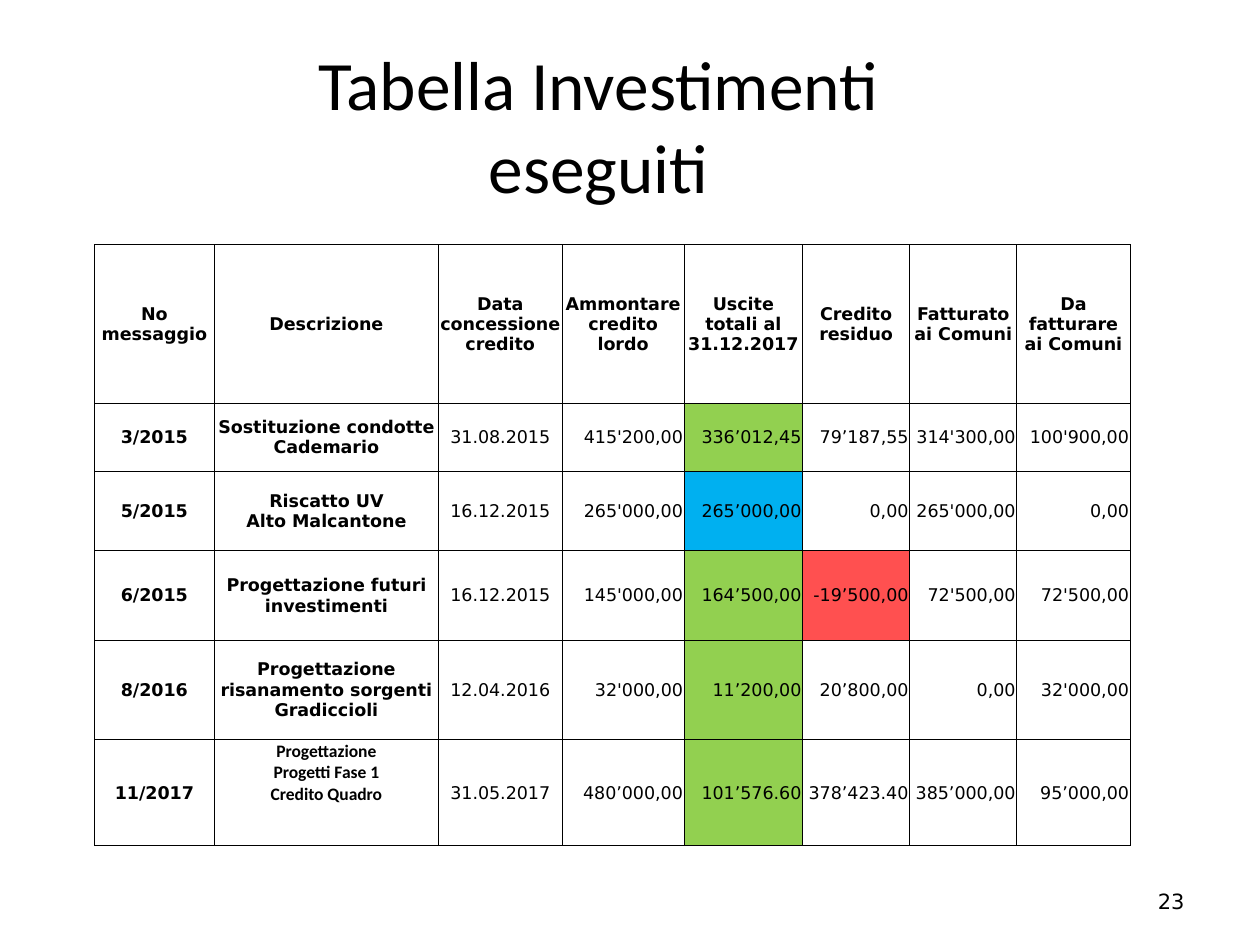
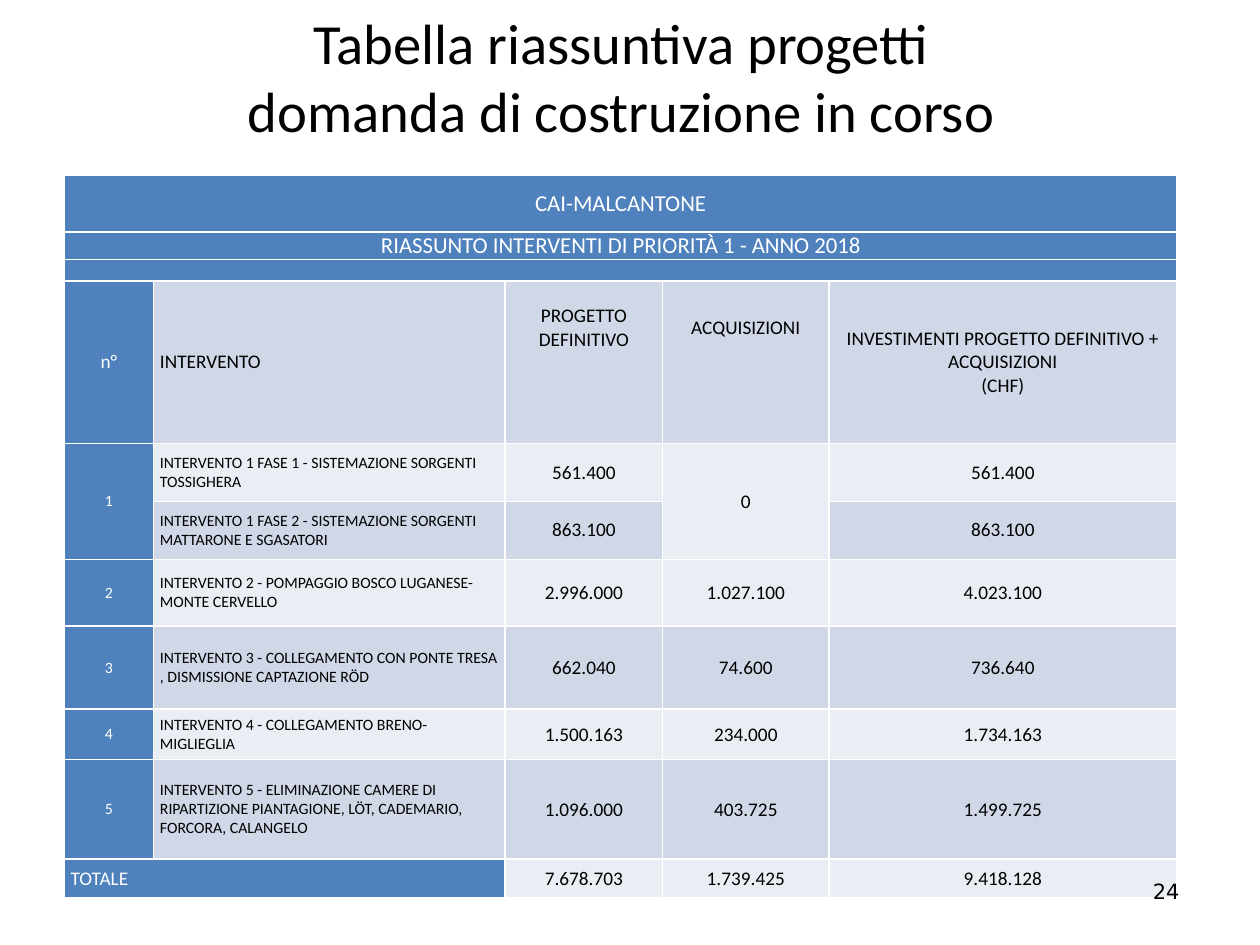
from lxml.etree import SubElement
from pptx import Presentation
from pptx.dml.color import RGBColor
from pptx.enum.text import MSO_ANCHOR, PP_ALIGN
from pptx.oxml import parse_xml
from pptx.oxml.ns import nsdecls, qn
from pptx.util import Inches, Pt

COLORS = {
    "black": "000000", "white": "FFFFFF", "green": "92D050", "cyan": "00B0F0",
    "red": "FF5050", "blue": "4F81BD", "band_dark": "D0D8E8", "band_light": "E9EDF4",
}
HEADING, NUMERIC = "Calibri", "DejaVu Sans"
LEFT, CENTER, RIGHT = PP_ALIGN.LEFT, PP_ALIGN.CENTER, PP_ALIGN.RIGHT

INVESTMENT_COLS = [0.95, 1.78, 0.98, 0.97, 0.94, 0.85, 0.85, 0.9]
INVESTMENT_ROWS = [1.26, 0.54, 0.63, 0.71, 0.79, 0.84]
INVESTMENTS = [
    ["No\nmessaggio", "Descrizione", "Data\nconcessione credito",
     "Ammontare credito\nlordo", "Uscite\ntotali al 31.12.2017",
     "Credito\nresiduo", "Fatturato\nai Comuni", "Da fatturare\nai Comuni"],
    ["3/2015", "Sostituzione condotte Cademario", "31.08.2015", "415'200,00",
     "336’012,45", "79’187,55", "314'300,00", "100'900,00"],
    ["5/2015", "Riscatto UV\nAlto Malcantone", "16.12.2015", "265'000,00",
     "265’000,00", "0,00", "265'000,00", "0,00"],
    ["6/2015", "Progettazione futuri investimenti", "16.12.2015", "145'000,00",
     "164’500,00", "-19’500,00", "72'500,00", "72'500,00"],
    ["8/2016", "Progettazione risanamento sorgenti Gradiccioli", "12.04.2016",
     "32'000,00", "11’200,00", "20’800,00", "0,00", "32'000,00"],
    ["11/2017", "Progettazione\nProgetti Fase 1\nCredito Quadro", "31.05.2017",
     "480’000,00", "101’576.60", "378’423.40", "385’000,00", "95’000,00"],
]
SPENT_COL = 4
CELL_FILLS = {(row, SPENT_COL): "green" for row in range(1, 6)}
CELL_FILLS.update({(2, SPENT_COL): "cyan", (3, 5): "red"})

PROJECT_COLS = [0.71, 2.79, 1.25, 1.32, 2.76]
PROJECT_ROWS = [0.45, 0.22, 0.17, 1.29, 0.46, 0.46, 0.53, 0.66, 0.4, 0.79, 0.31]
PROJECTS = [
    ["CAI-MALCANTONE", "", "", "", ""],
    ["RIASSUNTO INTERVENTI DI PRIORITÀ 1 - ANNO 2018", "", "", "", ""],
    ["", "", "", "", ""],
    ["n°", "INTERVENTO", "PROGETTO DEFINITIVO", "ACQUISIZIONI",
     "INVESTIMENTI PROGETTO DEFINITIVO + ACQUISIZIONI\n(CHF)"],
    ["1", "INTERVENTO 1 FASE 1 - SISTEMAZIONE SORGENTI TOSSIGHERA",
     "561.400", "0", "561.400"],
    ["", "INTERVENTO 1 FASE 2 - SISTEMAZIONE SORGENTI MATTARONE E SGASATORI",
     "863.100", "", "863.100"],
    ["2", "INTERVENTO 2 - POMPAGGIO BOSCO LUGANESE-MONTE CERVELLO",
     "2.996.000", "1.027.100", "4.023.100"],
    ["3", "INTERVENTO 3 - COLLEGAMENTO CON PONTE TRESA , DISMISSIONE CAPTAZIONE RÖD",
     "662.040", "74.600", "736.640"],
    ["4", "INTERVENTO 4 - COLLEGAMENTO BRENO-MIGLIEGLIA",
     "1.500.163", "234.000", "1.734.163"],
    ["5", "INTERVENTO 5 - ELIMINAZIONE CAMERE DI RIPARTIZIONE PIANTAGIONE, LÖT, "
          "CADEMARIO, FORCORA, CALANGELO",
     "1.096.000", "403.725", "1.499.725"],
    ["TOTALE", "", "7.678.703", "1.739.425", "9.418.128"],
]
TITLE_ROWS, HEADER_ROW, TOTAL_ROW = 3, 3, 10
MERGES = [((row, 0), (row, 4)) for row in range(TITLE_ROWS)]
MERGES += [((4, 0), (5, 0)), ((4, 3), (5, 3)), ((TOTAL_ROW, 0), (TOTAL_ROW, 1))]


def rgb(name):
    return RGBColor.from_string(COLORS[name])


def write(tf, text, size=10, font=HEADING, color="black", bold=False, align=CENTER):
    """Fill a text frame, one paragraph per line of text."""
    for i, line in enumerate(text.split("\n")):
        p = tf.paragraphs[0] if i == 0 else tf.add_paragraph()
        p.alignment = align
        if not line:
            SubElement(p._p, qn("a:endParaRPr"), sz=str(size * 100))
            continue
        r = p.add_run()
        r.text = line
        r.font.size, r.font.name, r.font.bold = Pt(size), font, bold
        r.font.color.rgb = rgb(color)


def add_text(s, box, text, **fmt):
    tf = s.shapes.add_textbox(*map(Inches, box)).text_frame
    tf.word_wrap = True
    tf.vertical_anchor = MSO_ANCHOR.MIDDLE
    write(tf, text, **fmt)


def add_page_number(s, box, number):
    add_text(s, box, str(number), size=12, font=NUMERIC, align=RIGHT)


def set_borders(cell, color, width):
    tcPr = cell._tc.get_or_add_tcPr()
    for i, side in enumerate("LRTB"):
        tcPr.insert(i, parse_xml(
            f'<a:ln{side} {nsdecls("a")} w="{Pt(width)}"><a:solidFill>'
            f'<a:srgbClr val="{COLORS[color]}"/></a:solidFill></a:ln{side}>'))


def add_grid(s, left, top, cols, rows, border, width):
    """Add an unstyled table with bordered cells."""
    table = s.shapes.add_table(len(rows), len(cols), Inches(left), Inches(top),
                               Inches(sum(cols)), Inches(sum(rows))).table
    table.first_row = table.horz_banding = False
    for col, size in zip(table.columns, cols):
        col.width = Inches(size)
    for row, size in zip(table.rows, rows):
        row.height = Inches(size)
    for cell in table.iter_cells():
        set_borders(cell, border, width)
    return table


def fill_cell(cell, text, fill=None, inset=0.0, top=0.0, bottom=0.0, **fmt):
    cell.vertical_anchor = MSO_ANCHOR.MIDDLE
    cell.margin_left = cell.margin_right = Inches(inset)
    cell.margin_top, cell.margin_bottom = Inches(top), Inches(bottom)
    if fill:
        cell.fill.solid()
        cell.fill.fore_color.rgb = rgb(fill)
    else:
        cell.fill.background()
    write(cell.text_frame, text, **fmt)


def investments_slide(s):
    add_text(s, (0.75, 0.36, 8, 1.25), "Tabella Investimenti\neseguiti", size=39.6)
    table = add_grid(s, 0.75, 1.94, INVESTMENT_COLS, INVESTMENT_ROWS, "black", 0.5)
    last = len(INVESTMENTS) - 1
    for row, values in enumerate(INVESTMENTS):
        for col, text in enumerate(values):
            raised = (row, col) == (last, 1)
            fill_cell(table.cell(row, col), text, fill=CELL_FILLS.get((row, col)),
                      inset=0.01, top=0.01, bottom=0.32 if raised else 0,
                      font=HEADING if raised else NUMERIC,
                      bold=row == 0 or col < 2,
                      align=RIGHT if row and col > 2 else CENTER)
    add_page_number(s, (7.17, 6.95, 2.33, 0.4), 23)


def project_size(row, col):
    if row < TITLE_ROWS:
        return 13 if PROJECTS[row][0] else 9
    return 9 if HEADER_ROW < row < TOTAL_ROW and col < 2 else 11


def projects_slide(s):
    add_text(s, (0.91, 0.13, 8.04, 0.95),
             "Tabella riassuntiva progetti\ndomanda di costruzione in corso", size=32.4)
    table = add_grid(s, 0.51, 1.39, PROJECT_COLS, PROJECT_ROWS, "white", 1)
    for first, last in MERGES:
        table.cell(*first).merge(table.cell(*last))
    for row, values in enumerate(PROJECTS):
        band = "band_dark" if row % 2 else "band_light"
        for col, text in enumerate(values):
            label = row < TITLE_ROWS or col == 0
            to_left = (row >= HEADER_ROW and col == 1) or (row, col) == (TOTAL_ROW, 0)
            raised = row == HEADER_ROW and col in (2, 3)
            fill_cell(table.cell(row, col), text, fill="blue" if label else band,
                      inset=0.05, bottom=0.55 if raised else 0,
                      size=project_size(row, col),
                      color="white" if label else "black",
                      align=LEFT if to_left else CENTER)
    add_page_number(s, (7.13, 6.82, 2.33, 0.5), 24)


def main():
    prs = Presentation()
    prs.slide_width, prs.slide_height = Inches(10), Inches(7.5)
    for build in (investments_slide, projects_slide):
        build(prs.slides.add_slide(prs.slide_layouts[6]))
    prs.save("out.pptx")


if __name__ == "__main__":
    main()
